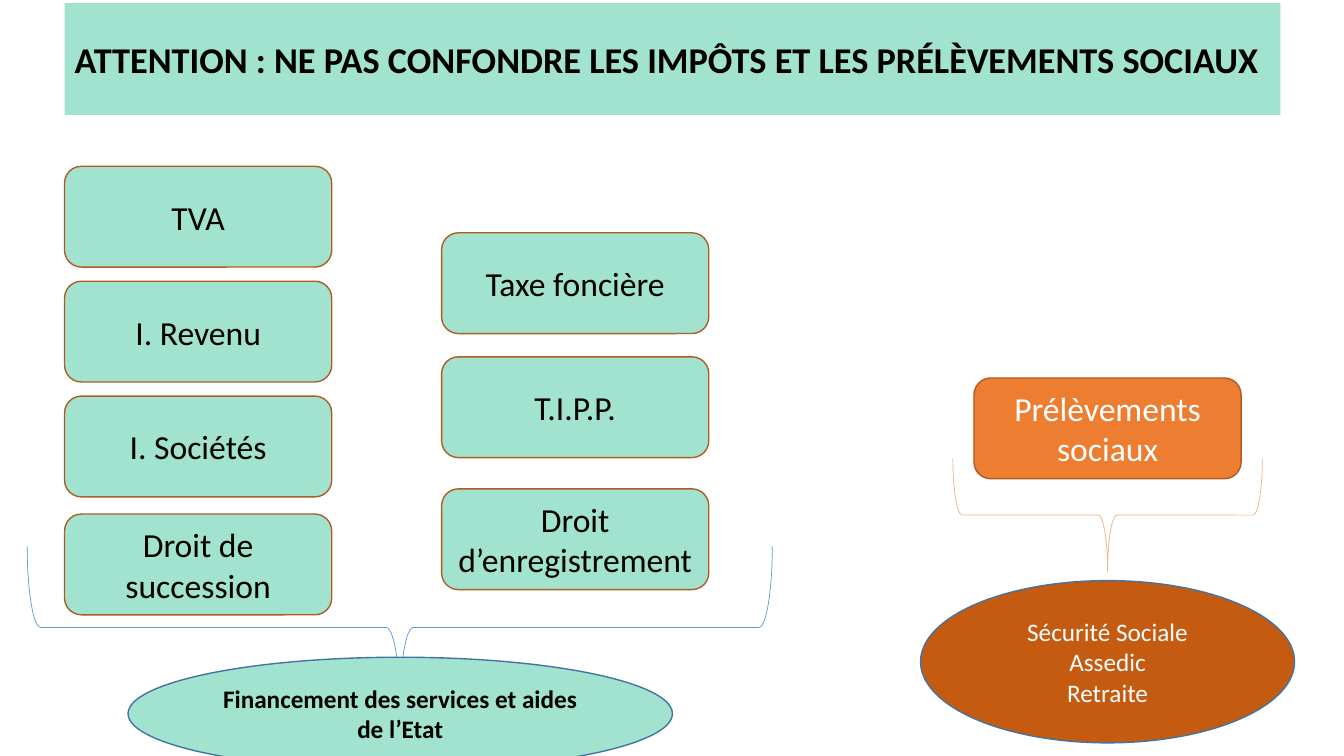
from pptx import Presentation
from pptx.dml.color import RGBColor
from pptx.enum.shapes import MSO_SHAPE as Shape
from pptx.enum.text import MSO_ANCHOR as Anchor, PP_ALIGN as Align
from pptx.util import Inches, Pt

MINT, ORANGE, RUST = "A1E3CF", "ED7D31", "C55A11"
BOX_EDGE, OVAL_EDGE = "AF5C24", "43739E"
BLACK, WHITE = "000000", "FFFFFF"
BOX_W, BOX_H = 2.65, 1


def color(hex_code):
    return RGBColor.from_string(hex_code)


def write(frame, lines, size, ink, bold=False, align=Align.CENTER):
    frame.word_wrap = True
    frame.vertical_anchor = Anchor.MIDDLE
    frame.text = "\n".join(lines)
    for paragraph in frame.paragraphs:
        paragraph.alignment = align
        font = paragraph.font
        font.name, font.size, font.bold = "Calibri", Pt(size), bold
        font.color.rgb = color(ink)


def add_outlined(slide, kind, box, edge, weight, fill=None):
    shape = slide.shapes.add_shape(kind, *map(Inches, box))
    shape.shadow.inherit = False
    if fill:
        shape.fill.solid()
        shape.fill.fore_color.rgb = color(fill)
    else:
        shape.fill.background()
    shape.line.color.rgb = color(edge)
    shape.line.width = Pt(weight)
    return shape


def add_levy(slide, left, top, label, fill=MINT, ink=BLACK):
    levy = add_outlined(slide, Shape.FLOWCHART_ALTERNATE_PROCESS,
                        (left, top, BOX_W, BOX_H), BOX_EDGE, 1, fill)
    write(levy.text_frame, [label], 24, ink)


def add_brace(slide, left, top, width, height, edge):
    """Downward brace filling the given box: a right brace turned a quarter."""
    shift = (width - height) / 2
    brace = add_outlined(slide, Shape.RIGHT_BRACE,
                         (left + shift, top - shift, height, width), edge, 0.5)
    brace.rotation = 90


def add_use(slide, box, lines, fill, ink, bold=False):
    use = add_outlined(slide, Shape.OVAL, box, OVAL_EDGE, 1, fill)
    write(use.text_frame, lines, 18, ink, bold)


def add_title(slide, left, top, width, height):
    title = slide.shapes.title
    title.left, title.top = Inches(left), Inches(top)
    title.width, title.height = Inches(width), Inches(height)
    title.fill.solid()
    title.fill.fore_color.rgb = color(MINT)
    write(title.text_frame,
          ["ATTENTION : NE PAS CONFONDRE LES IMPÔTS ET LES PRÉLÈVEMENTS SOCIAUX"],
          25.9, BLACK, bold=True, align=Align.LEFT)


def add_taxes(slide, left, top):
    # Two columns of taxes, offsets measured from the region's corner
    columns = {
        0.37: [(0, "TVA"), (1.14, "I. Revenu"), (2.28, "I. Sociétés"),
               (3.45, "Droit de succession")],
        4.11: [(0.66, "Taxe foncière"), (1.89, "T.I.P.P."),
               (3.2, "Droit d’enregistrement")],
    }
    for dx, taxes in columns.items():
        for dy, label in taxes:
            add_levy(slide, left + dx, top + dy, label)
    # What the taxes pay for
    add_brace(slide, left, top + 3.77, 7.39, 1.61, "5B9BD5")
    add_use(slide, (left + 1, top + 4.87, 5.4, 1.12),
            ["Financement des services et aides de l’Etat"], MINT, BLACK, bold=True)


def add_social_levies(slide, left, top):
    add_levy(slide, left + 0.53, top, "Prélèvements sociaux", ORANGE, WHITE)
    # What the social levies pay for
    add_brace(slide, left + 0.32, top + 0.8, 3.07, 1.12, "F4B183")
    add_use(slide, (left, top + 2.01, 3.71, 1.61),
            ["Sécurité Sociale", "Assedic", "Retraite"], RUST, WHITE)


def main():
    deck = Presentation()
    deck.slide_width, deck.slide_height = Inches(13.33), Inches(7.5)
    slide = deck.slides.add_slide(deck.slide_layouts[5])
    add_title(slide, 0.64, 0.03, 12.06, 1.11)
    add_taxes(slide, 0.27, 1.65)
    add_social_levies(slide, 9.13, 3.75)
    deck.save("out.pptx")


if __name__ == "__main__":
    main()
